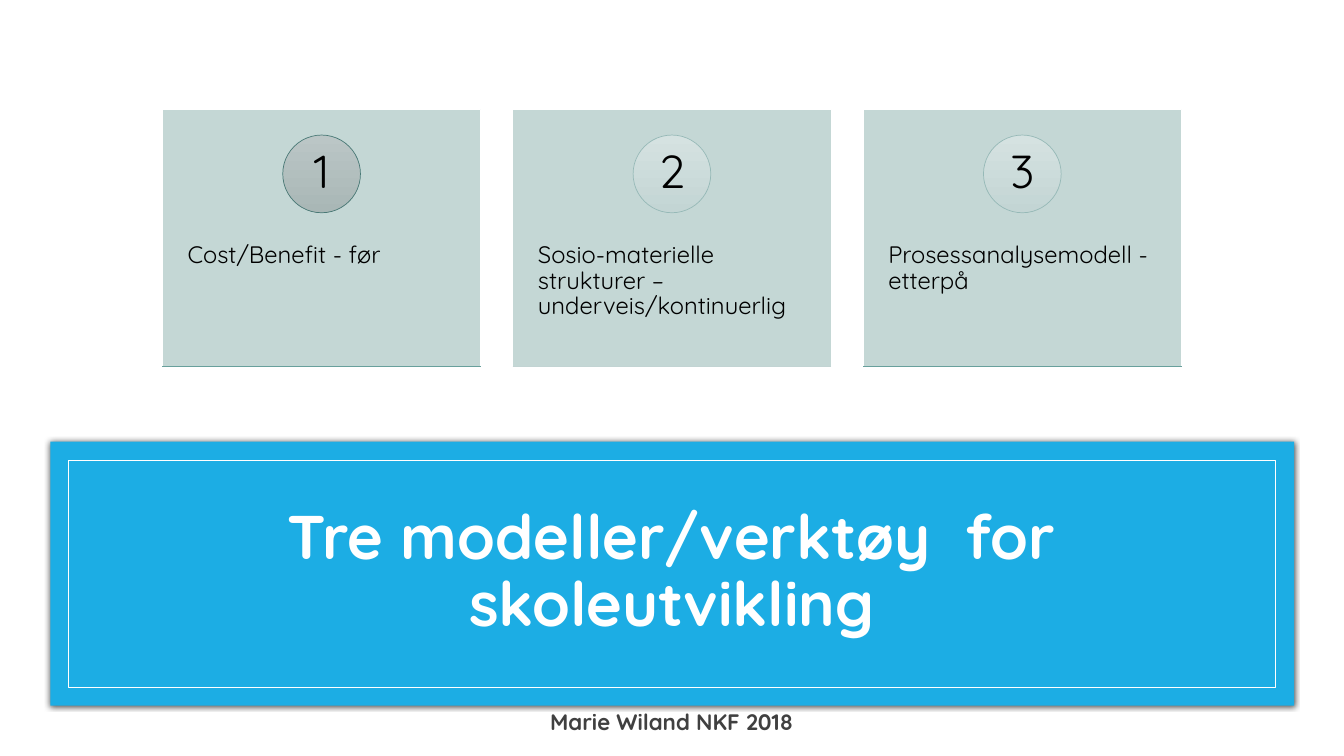
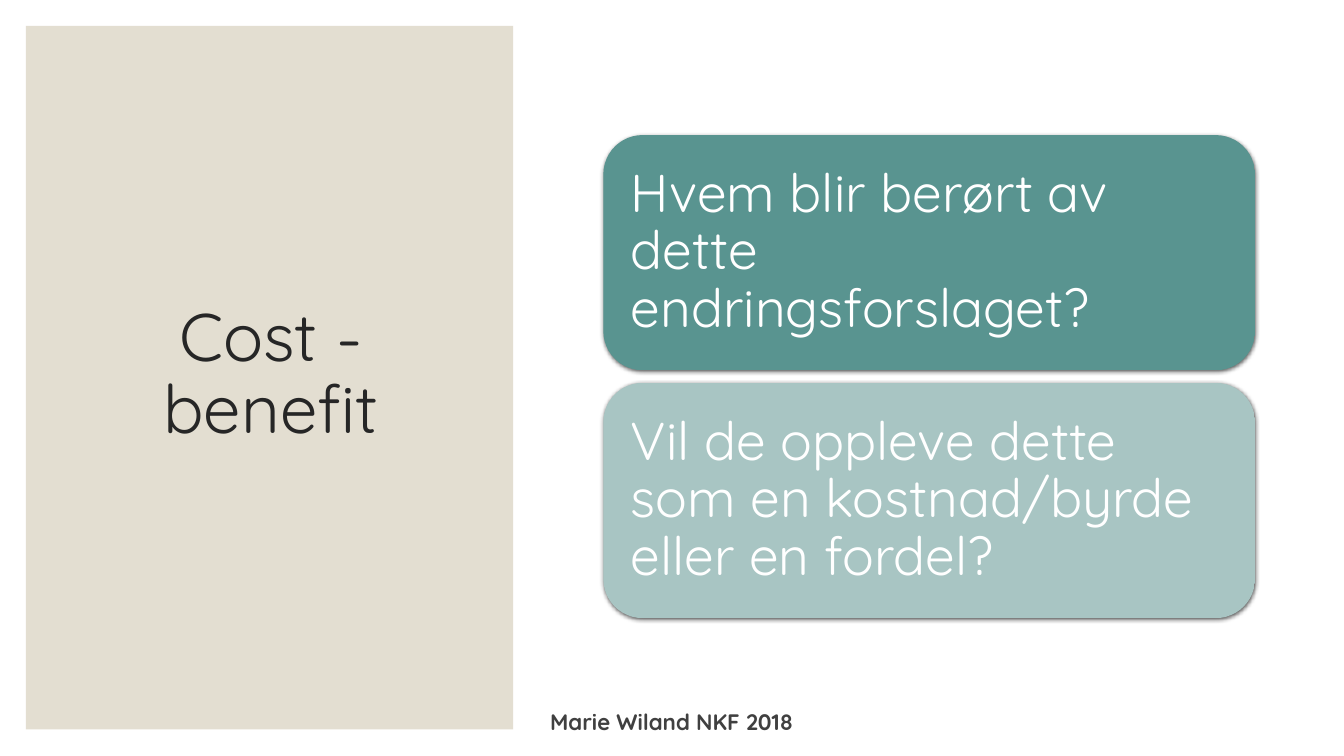
import pptx
import pptx.util
import pptx.dml.color
import pptx.enum.shapes
import pptx.enum.text
import pptx.oxml
import pptx.oxml.ns

Pt = pptx.util.Pt
KIND = pptx.enum.shapes.MSO_SHAPE
ANCHOR = pptx.enum.text.MSO_ANCHOR
ALIGN = pptx.enum.text.PP_ALIGN

FONT = "Quicksand"
HEX = {
    "white": "FFFFFF", "black": "000000", "title": "262626",
    "footer": "404040", "band": "1CADE4", "sand": "E3DED1",
    "card": "BED3D1", "teal": "68A09C", "pale": "C2D4D3",
    "dark rim": "497976", "light rim": "96B9B7",
}
FADES = {
    "dark disc": ("BBC6C6", "A9B7B6"), "light disc": ("D5E2E1", "C3D5D4"),
    "dark box": ("599490", "579490"), "light box": ("A8C5C3", "A6C4C2"),
}
CARDS = [
    ("Cost/Benefit - før", "dark disc", "dark rim", "teal"),
    ("Sosio-materielle strukturer – underveis/kontinuerlig",
     "light disc", "light rim", "pale"),
    ("Prosessanalysemodell - etterpå", "light disc", "light rim", "teal"),
]
BOXES = [
    ("Hvem blir berørt av dette endringsforslaget?", "dark box"),
    ("Vil de oppleve dette som en kostnad/byrde eller en fordel?", "light box"),
]


def color(name):
    return pptx.dml.color.RGBColor.from_string(HEX[name])


def points(*sizes):
    return [Pt(size) for size in sizes]


def add_effects(shape, inner=""):
    """Give the shape an effect list, which is empty unless inner is set."""
    space = pptx.oxml.ns.nsdecls("a")
    xml = f"<a:effectLst {space}>{inner}</a:effectLst>"
    shape._element.spPr.append(pptx.oxml.parse_xml(xml))


def add_shadow(shape, blur, dist, turn, alpha):
    add_effects(shape, (
        f'<a:outerShdw blurRad="{Pt(blur)}" dist="{Pt(dist)}" '
        f'dir="{turn * 60000}" rotWithShape="0"><a:srgbClr val="000000">'
        f'<a:alpha val="{alpha * 1000}"/></a:srgbClr></a:outerShdw>'))


def set_alpha(shape, share):
    tone = shape._element.spPr.find(".//" + pptx.oxml.ns.qn("a:srgbClr"))
    tone.append(pptx.oxml.parse_xml(
        f'<a:alpha {pptx.oxml.ns.nsdecls("a")} val="{share * 1000}"/>'))


def add_box(slide, kind, place, fill=None, line=None, shadow=None):
    """Draw a preset shape; fill names a plain colour or a fade."""
    shape = slide.shapes.add_shape(kind, *points(*place))
    if fill in FADES:
        shape.fill.gradient()
        shape.fill.gradient_angle = 270
        for stop, tone in zip(shape.fill.gradient_stops, FADES[fill]):
            stop.color.rgb = pptx.dml.color.RGBColor.from_string(tone)
    elif fill:
        shape.fill.solid()
        shape.fill.fore_color.rgb = color(fill)
    else:
        shape.fill.background()
    if line:
        shape.line.color.rgb = color(line)
        shape.line.width = Pt(0.5)
    else:
        shape.line.fill.background()
    if shadow:
        add_shadow(shape, *shadow)
    else:
        shape.shadow.inherit = False
    return shape


def add_line(slide, left, top, width, tone):
    line = slide.shapes.add_connector(
        pptx.enum.shapes.MSO_CONNECTOR.STRAIGHT,
        *points(left, top, left + width, top))
    line.line.color.rgb = color(tone)
    line.line.width = Pt(0.5)
    add_effects(line)


def set_text(shape, text, size, tone, bold=False, align=ALIGN.CENTER,
             anchor=ANCHOR.MIDDLE, inset=(7.2, 3.6), spacing=0.9):
    frame = shape.text_frame
    frame.text = text
    frame.word_wrap = True
    frame.auto_size = pptx.enum.text.MSO_AUTO_SIZE.NONE
    frame.vertical_anchor = anchor
    frame.margin_left = frame.margin_right = Pt(inset[0])
    frame.margin_top = frame.margin_bottom = Pt(inset[1])
    para = frame.paragraphs[0]
    para.alignment = align
    para.line_spacing = spacing
    font = para.runs[0].font
    font.name = FONT
    font.size = Pt(size)
    font.bold = bold
    font.color.rgb = color(tone)


def set_title(slide, text, place, size, tone, bold=False):
    title = slide.shapes.title
    title.left, title.top, title.width, title.height = points(*place)
    set_text(title, text, size, tone, bold)
    title._element.getparent().append(title._element)


def add_footer(slide):
    box = slide.shapes.add_textbox(*points(274.5, 507, 410.5, 21.5))
    set_text(box, "Marie Wiland NKF 2018", 16, "footer", True,
             anchor=ANCHOR.BOTTOM, spacing=1)


def add_card(slide, index, text, disc, rim, base):
    left, top, width, height, size = 116 + 250.25 * index, 78, 227.5, 184, 55.5
    card = add_box(slide, KIND.RECTANGLE, (left, top, width, height),
                   "card", "white")
    set_alpha(card, 90)
    set_text(card, text, 17, "black", align=ALIGN.LEFT,
             anchor=ANCHOR.TOP, inset=(18, 0))
    card.text_frame.margin_top = Pt(95.5)
    place = (left + (width - size) / 2, top + 18.5, size, size)
    disc = add_box(slide, KIND.OVAL, place, disc, rim)
    set_text(disc, str(index + 1), 33, "black", inset=(0, 0))
    add_line(slide, left, top + height, width, base)


def build_models(slide):
    add_box(slide, KIND.RECTANGLE, (36, 315.5, 888.5, 188.5), "band",
            shadow=(4, 0, 0, 66))
    add_box(slide, KIND.RECTANGLE, (48.5, 328.5, 862.5, 162.5), line="white")
    set_title(slide, "Tre modeller/verktøy  for skoleutvikling",
              (84, 355.5, 792, 108), 44, "white", True)
    for index, card in enumerate(CARDS):
        add_card(slide, index, *card)


def build_cost(slide):
    add_box(slide, KIND.RECTANGLE, (18.5, 18.5, 348, 502.5), "sand")
    set_title(slide, "Cost - benefit", (45, 44, 297, 449), 48, "title")
    for index, (text, fill) in enumerate(BOXES):
        box = add_box(slide, KIND.ROUNDED_RECTANGLE,
                      (431, 96.5 + 177 * index, 465.5, 168), fill,
                      shadow=(3, 1, 90, 63))
        set_text(box, text, 38, "white", align=ALIGN.LEFT, inset=(11.5, 11.5))


def main():
    deck = pptx.Presentation()
    deck.slide_width, deck.slide_height = points(960, 540)
    for build in (build_models, build_cost):
        slide = deck.slides.add_slide(deck.slide_layouts[5])
        build(slide)
        add_footer(slide)
    deck.save("out.pptx")


if __name__ == "__main__":
    main()
